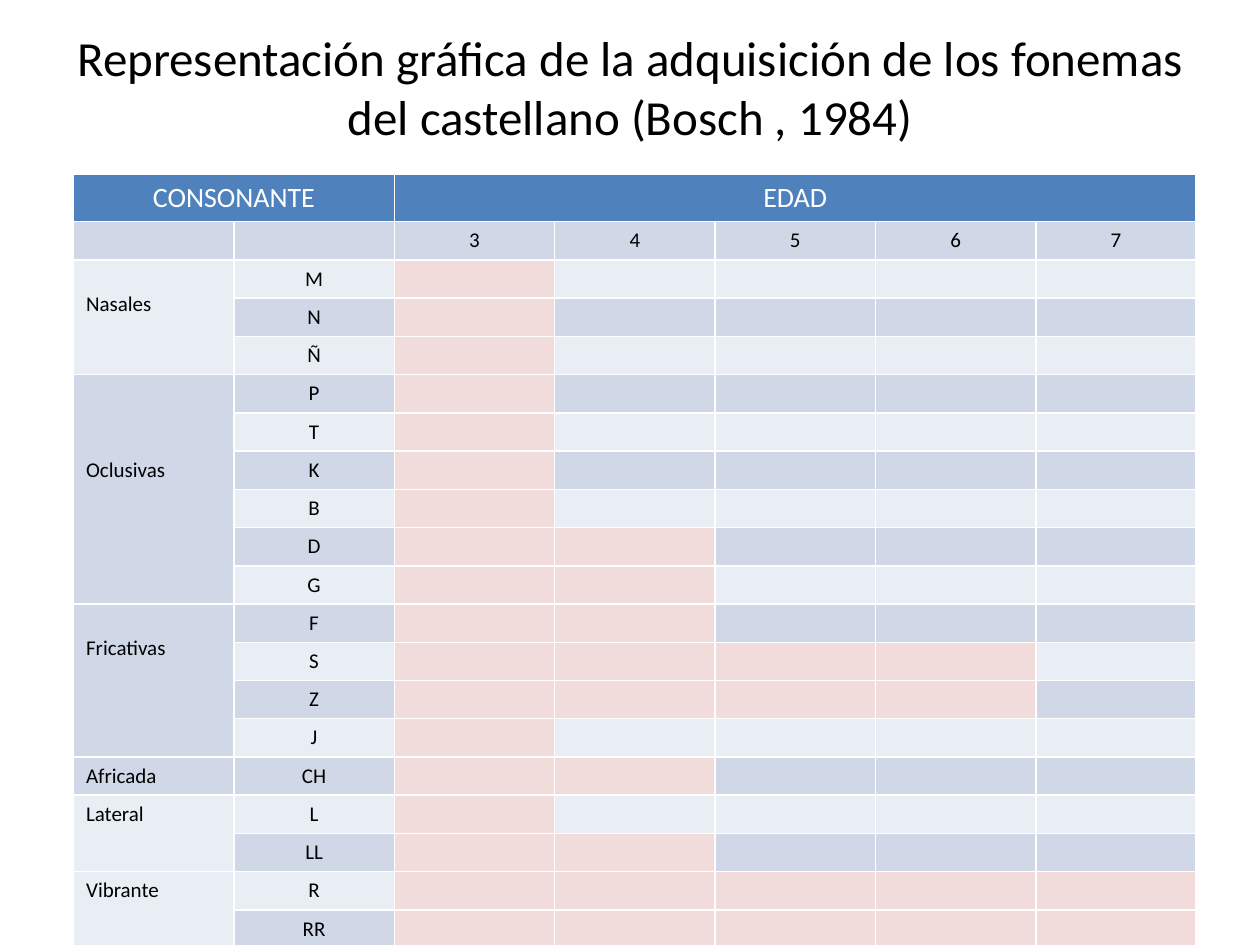
from lxml import etree
from pptx import Presentation, util as u
from pptx.dml.color import RGBColor
from pptx.enum import text
from pptx.oxml.ns import qn

WHITE = RGBColor(0xFF, 0xFF, 0xFF)
BLACK = RGBColor(0x00, 0x00, 0x00)
HEADER = RGBColor(0x4F, 0x81, 0xBD)
DARK_BAND = RGBColor(0xD0, 0xD8, 0xE8)
LIGHT_BAND = RGBColor(0xE9, 0xED, 0xF4)
ACQUIRED = RGBColor(0xF2, 0xDC, 0xDB)

AGES = ["3", "4", "5", "6", "7"]
# Group name, lines above the name, fill, and (phoneme, number of shaded ages)
GROUPS = [
    ("Nasales", 1, LIGHT_BAND, [("M", 1), ("N", 1), ("Ñ", 1)]),
    ("Oclusivas", 3, DARK_BAND,
     [("P", 1), ("T", 1), ("K", 1), ("B", 1), ("D", 2), ("G", 2)]),
    ("Fricativas", 1, DARK_BAND, [("F", 2), ("S", 4), ("Z", 4), ("J", 1)]),
    ("Africada", 0, DARK_BAND, [("CH", 2)]),
    ("Lateral", 0, LIGHT_BAND, [("L", 1), ("LL", 2)]),
    ("Vibrante", 0, LIGHT_BAND, [("R", 5), ("RR", 5)]),
]


class SlideBuilder:
    font = "Calibri"
    title_size = 28
    header_size = 16
    body_size = 12
    line_height = 14.65
    cell_margin = 3.6

    def __init__(self, slide):
        self.slide = slide

    def format_runs(self, paragraph, size, color):
        for span in paragraph.runs:
            span.font.name = self.font
            span.font.size = u.Pt(size)
            span.font.bold = False
            span.font.color.rgb = color

    def title(self, words, left, top, width, height):
        box = self.slide.shapes.title
        box.left, box.top = u.Pt(left), u.Pt(top)
        box.width, box.height = u.Pt(width), u.Pt(height)
        frame = box.text_frame
        frame.text = words
        frame.word_wrap = True
        frame.auto_size = text.MSO_AUTO_SIZE.NONE
        frame.vertical_anchor = text.MSO_ANCHOR.MIDDLE
        frame.margin_bottom = u.Pt(37.8)
        para = frame.paragraphs[0]
        para.alignment = text.PP_ALIGN.CENTER
        self.format_runs(para, self.title_size, BLACK)

    def table(self, left, top, column_width, columns, row_heights):
        grid = self.slide.shapes.add_table(
            len(row_heights), columns, u.Pt(left), u.Pt(top),
            u.Pt(column_width * columns), u.Pt(sum(row_heights))).table
        for column in grid.columns:
            column.width = u.Pt(column_width)
        for row, height in zip(grid.rows, row_heights):
            row.height = u.Pt(height)
        return grid

    def cell(self, cell, fill, words="", size=body_size, color=BLACK,
             align=text.PP_ALIGN.CENTER, lines_above=0):
        cell.fill.solid()
        cell.fill.fore_color.rgb = fill
        cell.margin_top = u.Pt(self.cell_margin + lines_above * self.line_height)
        para = cell.text_frame.paragraphs[0]
        if words:
            para.text = words
            para.alignment = align
            self.format_runs(para, size, color)
        else:
            # The end mark sets the height of an empty cell
            end = etree.SubElement(para._p, qn("a:endParaRPr"))
            end.set("sz", str(size * 100))


def fill_headings(builder, grid):
    for first, last, words in [(0, 1, "CONSONANTE"), (2, 6, "EDAD")]:
        grid.cell(0, first).merge(grid.cell(0, last))
        builder.cell(grid.cell(0, first), HEADER, words,
                     builder.header_size, WHITE)
    for column, words in enumerate(["", ""] + AGES):
        builder.cell(grid.cell(1, column), DARK_BAND, words)


def fill_groups(builder, grid):
    row = 2
    for name, lines_above, group_fill, phonemes in GROUPS:
        if len(phonemes) > 1:
            grid.cell(row, 0).merge(grid.cell(row + len(phonemes) - 1, 0))
        builder.cell(grid.cell(row, 0), group_fill, name,
                     align=text.PP_ALIGN.LEFT, lines_above=lines_above)
        for phoneme, shaded in phonemes:
            band = DARK_BAND if row % 2 else LIGHT_BAND
            builder.cell(grid.cell(row, 1), band, phoneme)
            for age in range(len(AGES)):
                builder.cell(grid.cell(row, 2 + age),
                             ACQUIRED if age < shaded else band)
            row += 1


def main():
    deck = Presentation()
    deck.slide_width, deck.slide_height = u.Pt(720), u.Pt(540)
    page = deck.slides.add_slide(deck.slide_layouts[5])
    builder = SlideBuilder(page)
    builder.title("Representación gráfica de la adquisición de los fonemas "
                  "del castellano (Bosch , 1984)", 36, 21.6, 648, 90)
    phoneme_count = sum(len(group[3]) for group in GROUPS)
    grid = builder.table(42, 99.8, 91.65, 2 + len(AGES),
                         [24.5] + [20.2] * (1 + phoneme_count))
    fill_headings(builder, grid)
    fill_groups(builder, grid)
    deck.save("out.pptx")


if __name__ == "__main__":
    main()
